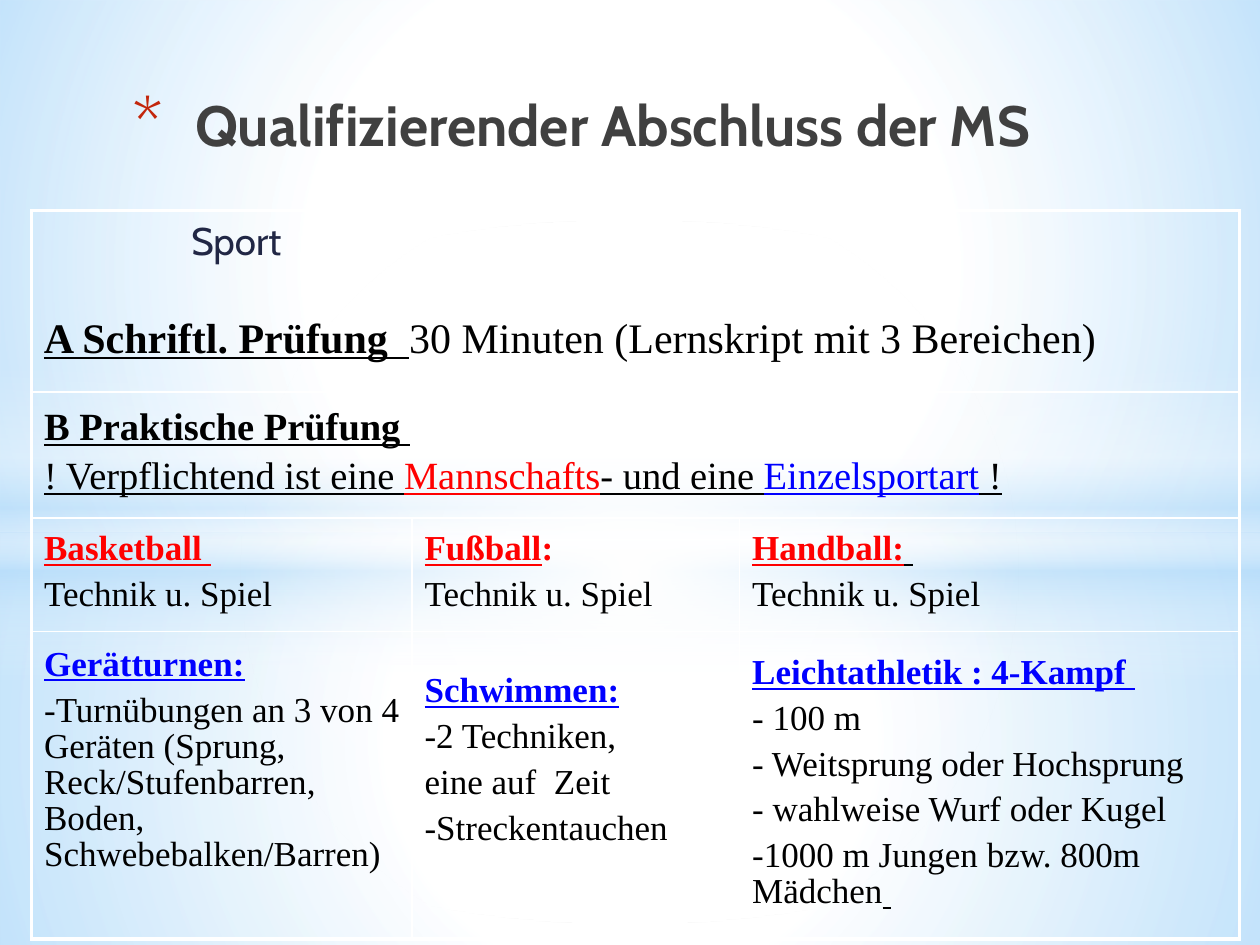
import pptx
import pptx.dml.color
import pptx.enum.shapes
import pptx.enum.text
import pptx.oxml
import pptx.oxml.ns
import pptx.util

WIDTH, HEIGHT = 10, 7.5
SHAPES = pptx.enum.shapes.MSO_SHAPE
ANCHORS = pptx.enum.text.MSO_ANCHOR

THEME = {
    "white": "FFFFFF", "sky": "B4DCFA", "black": "000000", "red": "FF0000",
    "blue": "0000FF", "navy": "212745", "gray": "404040", "bullet": "C3260C",
    "display": "Cabin", "body": "Times New Roman",
    "title": 32.4, "subtitle": 22, "written": 24, "practical": 22, "sport": 20,
    "outer_line": 2.25, "inner_line": 1,
}

PLAIN = {"color": "black", "bold": False, "underline": False}
UNDERLINED = {**PLAIN, "underline": True}
HEADING = {**UNDERLINED, "bold": True}
TEAM = {**HEADING, "color": "red"}
SOLO = {**HEADING, "color": "blue"}

CIRCLE = '<a:path path="circle"><a:fillToRect l="50000" t="50000" r="50000" b="50000"/></a:path>'
DOWNWARD = '<a:lin ang="5400000" scaled="0"/>'
BACKDROP = [
    (SHAPES.RECTANGLE, (0, 0.564, 1, 0.436), CIRCLE,
     [(0, "white", 91), (37, "white", 76), (100, "sky", 79)]),
    (SHAPES.RECTANGLE, (0, 0, 1, 0.564), CIRCLE,
     [(0, "white", 89), (48, "white", 62), (100, "sky", 79)]),
    (SHAPES.RECTANGLE, (0, 0.387, 1, 0.333), DOWNWARD,
     [(0, "white", 0), (29, "white", 30), (45, "sky", 40),
      (55, "white", 26), (65, "sky", 60), (100, "white", 0)]),
    (SHAPES.OVAL, (0, 0.233, 1, 0.744), CIRCLE,
     [(0, "white", 100), (54, "white", 0)]),
]

SUBTITLE = [[("Sport", {"color": "navy"})]]
TITLE = [[("Qualifizierender Abschluss der MS", {"color": "gray", "bold": True})]]
WRITTEN = [[("A Schriftl. Prüfung  ", HEADING),
            ("30 Minuten (Lernskript mit 3 Bereichen)", PLAIN)]]
PRACTICAL = [
    [("B Praktische Prüfung ", HEADING)],
    [("! Verpflichtend ist eine ", UNDERLINED),
     ("Mannschafts", {**UNDERLINED, "color": "red"}),
     ("- und eine ", UNDERLINED),
     ("Einzelsportart", {**UNDERLINED, "color": "blue"}),
     (" !", UNDERLINED)],
]
TECHNIQUE = [("Technik u. Spiel", PLAIN)]
TEAM_SPORTS = [
    [[("Basketball ", TEAM)], TECHNIQUE],
    [[("Fußball", TEAM), (":", {**TEAM, "underline": False})], TECHNIQUE],
    [[("Handball:", TEAM), (" ", HEADING)], TECHNIQUE],
]
SOLO_SPORTS = [
    [[("Gerätturnen:", SOLO)],
     [("-Turnübungen an 3 von 4 Geräten (Sprung, Reck/Stufenbarren, "
       "Boden, Schwebebalken/Barren)", PLAIN)]],
    [[("Schwimmen:", SOLO)],
     [("-2 Techniken,", PLAIN)],
     [("eine auf  Zeit", PLAIN)],
     [("-Streckentauchen", PLAIN)]],
    [[("Leichtathletik : 4-Kampf", SOLO), (" ", {**SOLO, "bold": False})],
     [("- 100 m", PLAIN)],
     [("- Weitsprung oder Hochsprung", PLAIN)],
     [("- wahlweise Wurf oder Kugel", PLAIN)],
     [("-1000 m Jungen bzw. 800m Mädchen", PLAIN), (" ", UNDERLINED)]],
]
ROWS = [([], 1.44, "sport"), ([PRACTICAL], 1, "practical"),
        (TEAM_SPORTS, 0.9, "sport"), (SOLO_SPORTS, 2.44, "sport")]
COLUMNS = [3.02, 2.6, 3.97]
TABLE_BOX = (0.025, 0.223, 0.959, 0.771)
RAISED_CELLS = {(3, 0), (3, 1)}


def place(box):
    return [pptx.util.Inches(share * side)
            for share, side in zip(box, (WIDTH, HEIGHT, WIDTH, HEIGHT))]


def parse(tag, attributes, content):
    return pptx.oxml.parse_xml(
        f'<a:{tag} {pptx.oxml.ns.nsdecls("a")} {attributes}>{content}</a:{tag}>')


def add_backdrop(slide, preset, box, direction, stops):
    shape = slide.shapes.add_shape(preset, *place(box))
    shape.shadow.inherit = False
    shape.line.fill.background()
    shape.fill.background()
    stop_xml = "".join(
        f'<a:gs pos="{position * 1000}"><a:srgbClr val="{THEME[color]}">'
        f'<a:alpha val="{alpha * 1000}"/></a:srgbClr></a:gs>'
        for position, color, alpha in stops)
    gradient = parse("gradFill", 'rotWithShape="1"', f"<a:gsLst>{stop_xml}</a:gsLst>{direction}")
    properties = shape._element.spPr
    properties.replace(properties.find(pptx.oxml.ns.qn("a:noFill")), gradient)


def write(frame, paragraphs, size, face, spacing=None):
    for index, runs in enumerate(paragraphs):
        paragraph = frame.paragraphs[0] if index == 0 else frame.add_paragraph()
        for name, value in (spacing or {}).items():
            if name != "space_before" or index:
                setattr(paragraph, name, value)
        for text, style in runs:
            run = paragraph.add_run()
            run.text = text
            formats = {"name": THEME[face], "size": pptx.util.Pt(THEME[size]),
                       "bold": style.get("bold", False),
                       "underline": style.get("underline", False)}
            for name, value in formats.items():
                setattr(run.font, name, value)
            run.font.color.rgb = pptx.dml.color.RGBColor.from_string(THEME[style["color"]])


def add_text(slide, box, paragraphs, size, face):
    frame = slide.shapes.add_textbox(*place(box)).text_frame
    frame.word_wrap = True
    write(frame, paragraphs, size, face)
    return frame.paragraphs[0]


def add_bullet(paragraph):
    properties = paragraph._p.get_or_add_pPr()
    properties.set("marL", str(pptx.util.Inches(0.7)))
    properties.set("indent", str(pptx.util.Inches(-0.5)))
    properties.append(parse("buClr", "", f'<a:srgbClr val="{THEME["bullet"]}"/>'))
    properties.append(parse("buSzPct", 'val="128000"', ""))
    properties.append(parse("buFont", f'typeface="{THEME["display"]}"', ""))
    properties.append(parse("buChar", 'char="*"', ""))


def draw_borders(cell, outer_edges):
    properties = cell._tc.get_or_add_tcPr()
    for index, (side, is_outer) in enumerate(outer_edges.items()):
        width = pptx.util.Pt(THEME["outer_line" if is_outer else "inner_line"])
        fill = f'<a:solidFill><a:srgbClr val="{THEME["white"]}"/></a:solidFill>'
        properties.insert(index, parse(f"ln{side}", f'w="{width}"', fill))


def add_sports_table(slide):
    table = slide.shapes.add_table(len(ROWS), len(COLUMNS), *place(TABLE_BOX)).table
    table.first_row = table.horz_banding = False
    for column, width in zip(table.columns, COLUMNS):
        column.width = pptx.util.Inches(width)
    last_row, last_column = len(ROWS) - 1, len(COLUMNS) - 1
    spacing = {"line_spacing": 0.93, "space_before": pptx.util.Pt(5.5)}
    for row, (contents, height, size) in enumerate(ROWS):
        table.rows[row].height = pptx.util.Inches(height)
        is_merged = len(contents) < len(COLUMNS)
        if is_merged:
            table.cell(row, 0).merge(table.cell(row, last_column))
        for column in range(len(COLUMNS)):
            cell = table.cell(row, column)
            cell.fill.background()
            draw_borders(cell, {"L": column == 0, "R": is_merged or column == last_column,
                                "T": row == 0, "B": row == last_row})
            bottom = 0.41 if (row, column) in RAISED_CELLS else 0.05
            formats = {"vertical_anchor": ANCHORS.MIDDLE,
                       "margin_left": pptx.util.Inches(0.1),
                       "margin_right": pptx.util.Inches(0.1),
                       "margin_top": pptx.util.Inches(0.02),
                       "margin_bottom": pptx.util.Inches(bottom)}
            for name, value in formats.items():
                setattr(cell, name, value)
        for column, paragraphs in enumerate(contents):
            write(table.cell(row, column).text_frame, paragraphs, size, "body", spacing)


def main():
    presentation = pptx.Presentation()
    presentation.slide_width = pptx.util.Inches(WIDTH)
    presentation.slide_height = pptx.util.Inches(HEIGHT)
    slide = presentation.slides.add_slide(presentation.slide_layouts[6])
    for backdrop in BACKDROP:
        add_backdrop(slide, *backdrop)
    add_text(slide, (0.142, 0.223, 0.7, 0.1), SUBTITLE, "subtitle", "display")
    add_bullet(add_text(slide, (0.075, 0.089, 0.85, 0.123), TITLE, "title", "display"))
    add_sports_table(slide)
    add_text(slide, (0.025, 0.323, 0.948, 0.068), WRITTEN, "written", "body")
    presentation.save("out.pptx")


if __name__ == "__main__":
    main()
